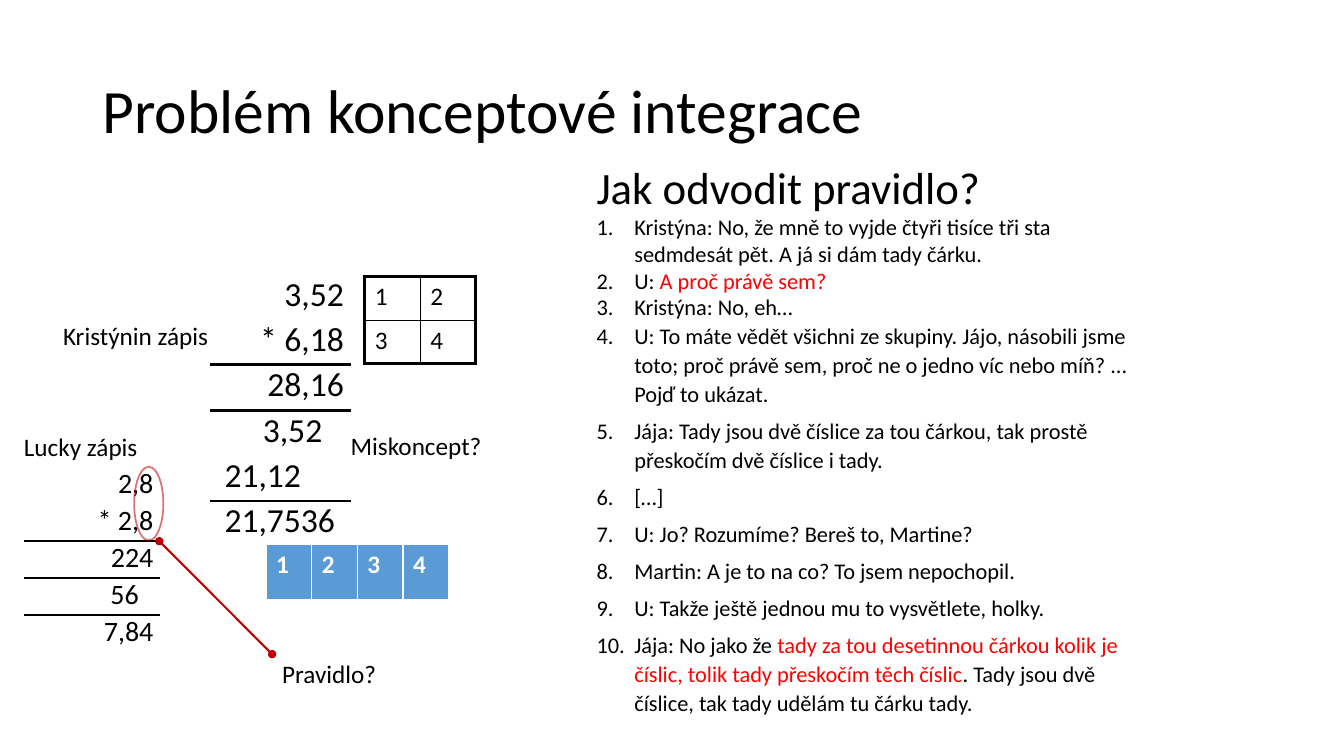
from dataclasses import dataclass

from lxml import etree
from pptx import Presentation
from pptx.dml.color import RGBColor
from pptx.enum.shapes import MSO_CONNECTOR, MSO_SHAPE
from pptx.enum.text import MSO_ANCHOR, MSO_AUTO_SIZE, PP_ALIGN
from pptx.oxml.ns import qn
from pptx.util import Pt

STRAIGHT = MSO_CONNECTOR.STRAIGHT
OVAL = MSO_SHAPE.OVAL
MIDDLE = MSO_ANCHOR.MIDDLE
FIT_SHAPE = MSO_AUTO_SIZE.SHAPE_TO_FIT_TEXT
LEFT, RIGHT = PP_ALIGN.LEFT, PP_ALIGN.RIGHT

FONT = "Calibri"
COLORS = {
    "text": "000000",
    "highlight": "FF0000",
    "white": "FFFFFF",
    "cell": "5B9BD5",
    "pointer": "C00000",
}


@dataclass(frozen=True)
class Label:
    text: str
    left: float
    top: float
    width: float


@dataclass(frozen=True)
class Entry:
    text: str
    align: PP_ALIGN = LEFT
    margin_left: float = 7.2
    margin_right: float = 7.2


@dataclass(frozen=True)
class Grid:
    left: float
    top: float
    column_width: float
    row_heights: list[float]
    entries: list[list[Entry]]
    size: float
    row_lines: list[float]
    column_lines: list[float]
    margin_vertical: float = 0
    line_color: str = "text"
    text_color: str = "text"
    fill: str = ""
    bold: bool = False


@dataclass(frozen=True)
class Remark:
    runs: list[tuple[str, str]]
    spaced: bool = True


def plain(text: str, spaced: bool = True) -> Remark:
    return Remark([(text, "text")], spaced)


def digit(text: str, indent: float = 5) -> Entry:
    return Entry(text, RIGHT, 5, indent)


LABELS = [
    Label("Pravidlo?", 194.4, 466.6, 82),
    Label("Kristýnin zápis", 38, 225.4, 119.5),
    Label("Lucky zápis", 10, 304.6, 96.5),
    Label("Miskoncept?", 243.4, 303.8, 108.7),
]

KRISTYNA = Grid(
    149.8, 195.8, 100.8, [32.4] * 5 + [64],
    [[digit("3,52")], [digit("* 6,18")], [digit("28,16")], [digit("3,52", 20.4)],
     [Entry("21,12", LEFT, 10.6, 5)], [Entry("21,7536", LEFT, 10.6, 5)]],
    24, [0, 0, 2.25, 2.25, 0, 2.25, 0], [0, 0],
)
LUCKA = Grid(
    17.4, 333.4, 97.2, [26.5] * 5,
    [[digit("2,8")], [digit("* 2,8")], [digit("224")], [digit("56", 15.5)], [digit("7,84")]],
    20, [0, 0, 1.5, 1, 1, 0], [0, 0],
)
QUADRANTS = Grid(
    260.6, 197.3, 39.6, [31.3] * 2,
    [[Entry("1"), Entry("2")], [Entry("3"), Entry("4")]],
    18, [2.25, 0.25, 2.25], [2.25, 0.25, 2.25], 3.6,
)
PLACES = Grid(
    190.1, 388.8, 32.6, [40.3],
    [[Entry(number) for number in "1234"]],
    18, [1, 3], [1] * 5, 3.6, "white", "white", "cell", True,
)

REMARKS = [
    plain("Kristýna: No, že mně to vyjde čtyři tisíce tři sta sedmdesát pět. "
          "A já si dám tady čárku.", False),
    Remark([("U: ", "text"), ("A proč právě sem?", "highlight")], False),
    plain("Kristýna: No, eh…", False),
    plain("U: To máte vědět všichni ze skupiny. Jájo, násobili jsme toto; "
          "proč právě sem, proč ne o jedno víc nebo míň? ... Pojď to ukázat."),
    plain("Jája: Tady jsou dvě číslice za tou čárkou, tak prostě přeskočím dvě číslice i tady."),
    plain("[…]"),
    plain("U: Jo? Rozumíme? Bereš to, Martine?"),
    plain("Martin: A je to na co? To jsem nepochopil."),
    plain("U: Takže ještě jednou mu to vysvětlete, holky."),
    Remark([
        ("Jája: No jako že ", "text"),
        ("tady za tou desetinnou čárkou kolik je číslic, tolik tady přeskočím těch číslic",
         "highlight"),
        (". Tady jsou dvě číslice, tak tady udělám tu čárku tady.", "text"),
    ]),
]


def rgb(name: str) -> RGBColor:
    return RGBColor.from_string(COLORS[name])


def add_run(paragraph, text: str, size: float, color: str = "text", bold: bool = False) -> None:
    run = paragraph.add_run()
    run.text = text
    run.font.name = FONT
    run.font.size = Pt(size)
    run.font.bold = bold
    run.font.color.rgb = rgb(color)


def add_text_frame(slide, left: float, top: float, width: float, height: float, wrap: bool = True):
    frame = slide.shapes.add_textbox(Pt(left), Pt(top), Pt(width), Pt(height)).text_frame
    frame.word_wrap = wrap
    return frame


def add_title(slide) -> None:
    frame = add_text_frame(slide, 66, 28.8, 828, 104.4)
    frame.vertical_anchor = MIDDLE
    frame.paragraphs[0].line_spacing = 0.9
    add_run(frame.paragraphs[0], "Problém konceptové integrace", 44)


def add_label(slide, label: Label) -> None:
    frame = add_text_frame(slide, label.left, label.top, label.width, 29, False)
    frame.auto_size = FIT_SHAPE
    add_run(frame.paragraphs[0], label.text, 18)


def add_dialogue(slide) -> None:
    frame = add_text_frame(slide, 419, 110.2, 394.6, 473)
    frame.auto_size = FIT_SHAPE
    add_run(frame.paragraphs[0], "Jak odvodit pravidlo?", 32)
    for remark in REMARKS:
        paragraph = frame.add_paragraph()
        if remark.spaced:
            paragraph.line_spacing = 1.07
            paragraph.space_after = Pt(6)
        properties = paragraph._p.get_or_add_pPr()
        properties.set("marL", str(Pt(27)))
        properties.set("indent", str(-Pt(27)))
        etree.SubElement(properties, qn("a:buAutoNum"), type="arabicPeriod")
        for text, color in remark.runs:
            add_run(paragraph, text, 16, color)


def set_borders(cell, widths: dict[str, float], color: str) -> None:
    properties = cell._tc.get_or_add_tcPr()
    for position, (side, width) in enumerate(widths.items()):
        line = etree.Element(qn(f"a:ln{side}"), w=str(Pt(width)))
        if width:
            fill = etree.SubElement(line, qn("a:solidFill"))
            etree.SubElement(fill, qn("a:srgbClr"), val=COLORS[color])
        else:
            etree.SubElement(line, qn("a:noFill"))
        properties.insert(position, line)


def add_grid(slide, grid: Grid) -> None:
    rows, columns = len(grid.entries), len(grid.entries[0])
    table = slide.shapes.add_table(
        rows, columns, Pt(grid.left), Pt(grid.top),
        Pt(grid.column_width * columns), Pt(sum(grid.row_heights)),
    ).table
    table.first_row = table.horz_banding = False
    for column in table.columns:
        column.width = Pt(grid.column_width)
    for row, entries in enumerate(grid.entries):
        table.rows[row].height = Pt(grid.row_heights[row])
        for column, entry in enumerate(entries):
            cell = table.cell(row, column)
            cell.margin_left, cell.margin_right = Pt(entry.margin_left), Pt(entry.margin_right)
            cell.margin_top = cell.margin_bottom = Pt(grid.margin_vertical)
            if grid.fill:
                cell.fill.solid()
                cell.fill.fore_color.rgb = rgb(grid.fill)
            else:
                cell.fill.background()
            set_borders(cell, {
                "L": grid.column_lines[column], "R": grid.column_lines[column + 1],
                "T": grid.row_lines[row], "B": grid.row_lines[row + 1],
            }, grid.line_color)
            paragraph = cell.text_frame.paragraphs[0]
            paragraph.alignment = entry.align
            add_run(paragraph, entry.text, grid.size, grid.text_color, grid.bold)


def add_pointer(slide) -> None:
    connector = slide.shapes.add_connector(STRAIGHT, Pt(194.4), Pt(467.3), Pt(113.8), Pt(386.6))
    connector.line.color.rgb = rgb("pointer")
    connector.line.width = Pt(1.5)
    line = connector.line._get_or_add_ln()
    for end in ("headEnd", "tailEnd"):
        etree.SubElement(line, qn(f"a:{end}"), type="oval")
    etree.SubElement(connector._element.spPr, qn("a:effectLst"))


def add_decimal_ring(slide) -> None:
    ring = slide.shapes.add_shape(OVAL, Pt(95.8), Pt(333.4), Pt(20.9), Pt(52.6))
    ring.shadow.inherit = False
    ring.fill.background()
    ring.line.color.rgb = rgb("pointer")
    ring.line.width = Pt(1.25)
    color = ring.line._get_or_add_ln().find(f".//{qn('a:srgbClr')}")
    etree.SubElement(color, qn("a:alpha"), val="55000")


def main() -> None:
    presentation = Presentation()
    presentation.slide_width, presentation.slide_height = Pt(960), Pt(540)
    slide = presentation.slides.add_slide(presentation.slide_layouts[6])
    add_title(slide)
    add_dialogue(slide)
    for grid in (KRISTYNA, QUADRANTS, PLACES, LUCKA):
        add_grid(slide, grid)
    add_pointer(slide)
    add_decimal_ring(slide)
    for label in LABELS:
        add_label(slide, label)
    presentation.save("out.pptx")


if __name__ == "__main__":
    main()
